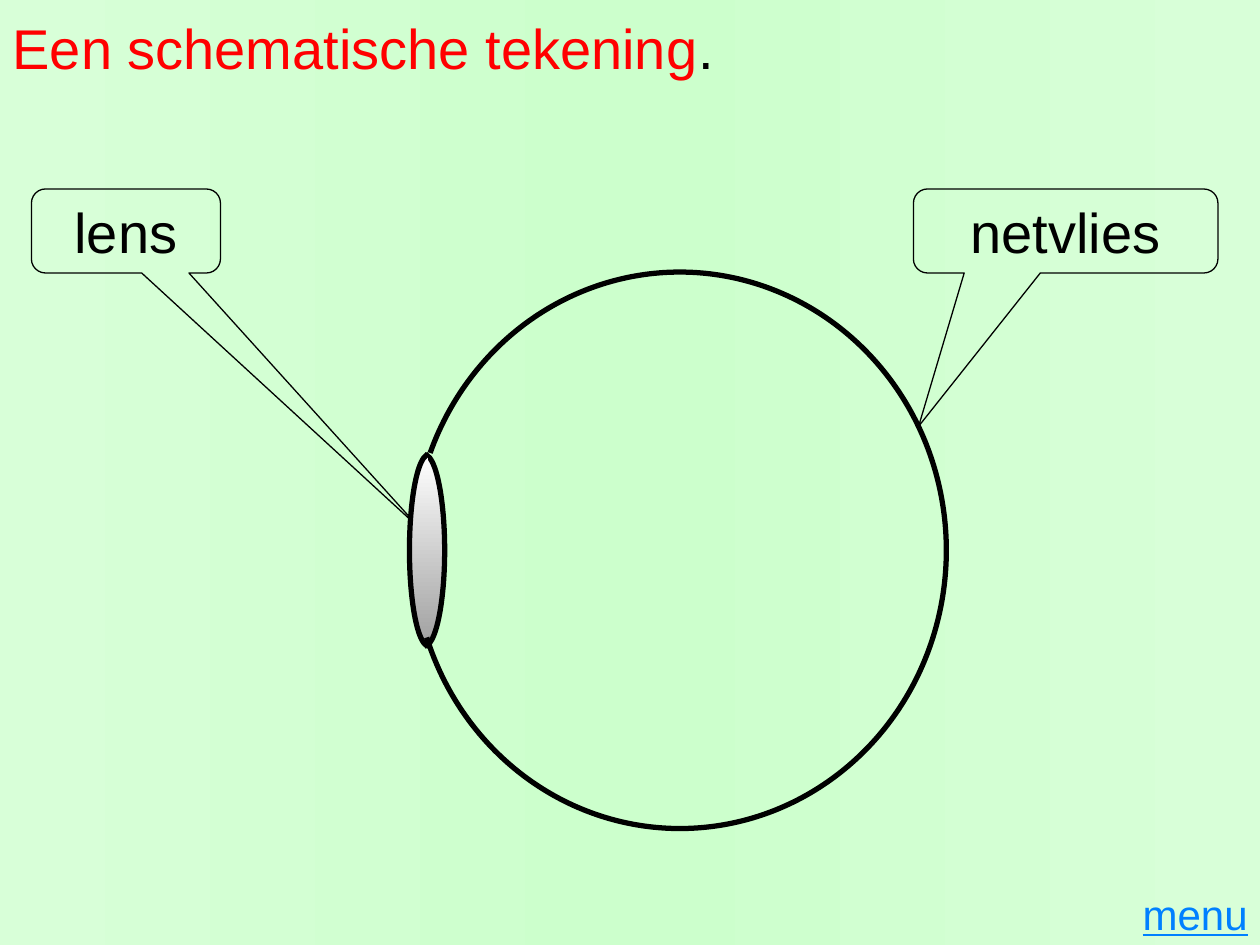
"""Build a slide with a labelled schematic drawing of the eye."""
import pptx
import pptx.dml.color
import pptx.enum.shapes
import pptx.enum.text
import pptx.oxml.ns
import pptx.util
from lxml import etree

Pt = pptx.util.Pt
SHAPE = pptx.enum.shapes.MSO_SHAPE
ALIGN = pptx.enum.text.PP_ALIGN
ANCHOR = pptx.enum.text.MSO_ANCHOR

COLOURS = {
    "ink": "000000",
    "title": "FF0000",
    "menu": "0080FF",
    "edge": "D8FFD8",
    "middle": "CCFFCC",
    "lens_top": "FFFFFF",
    "lens_bottom": "A0A0A0",
}
DEGREE = 0.6


def rgb(colour):
    return pptx.dml.color.RGBColor.from_string(COLOURS[colour])


def set_all(target, values):
    for name, value in values.items():
        setattr(target, name, value)


def paint_gradient(fill, owner, angle, colours):
    fill.gradient()
    fill.gradient_angle = angle
    qn = pptx.oxml.ns.qn
    stops = next(owner.iter(qn("a:gsLst")))
    for stop in list(stops):
        stops.remove(stop)
    for index, colour in enumerate(colours):
        position = 100000 * index // (len(colours) - 1)
        stop = etree.SubElement(stops, qn("a:gs"), pos=str(position))
        etree.SubElement(stop, qn("a:srgbClr"), val=COLOURS[colour])


def write(frame, pieces, size, align, anchor, underline=None):
    set_all(frame, {"word_wrap": True, "vertical_anchor": anchor,
                    "auto_size": pptx.enum.text.MSO_AUTO_SIZE.NONE})
    paragraph = frame.paragraphs[0]
    set_all(paragraph, {"alignment": align, "space_before": Pt(0)})
    for words, colour in pieces:
        run = paragraph.add_run()
        run.text = words
        set_all(run.font, {"name": "Arial", "size": Pt(size), "underline": underline})
        run.font.color.rgb = rgb(colour)


def add_outline(slide, preset, box, adjustments, width):
    outline = slide.shapes.add_shape(preset, *map(Pt, box))
    for index, value in enumerate(adjustments):
        outline.adjustments[index] = value
    outline.shadow.inherit = False
    outline.fill.background()
    outline.line.color.rgb = rgb("ink")
    outline.line.width = Pt(width)
    return outline


def add_callout(slide, label, left, width, tip):
    callout = add_outline(slide, SHAPE.ROUNDED_RECTANGULAR_CALLOUT,
                          (left, 108, width, 48), (*tip, 0.167), 0.75)
    write(callout.text_frame, [(label, "ink")], 32, ALIGN.CENTER, ANCHOR.MIDDLE)


def add_arc(slide, centre_x, radius_x, radius_y, start, end):
    centre_y = 314.5
    box = (centre_x - radius_x, centre_y - radius_y, 2 * radius_x, 2 * radius_y)
    return add_outline(slide, SHAPE.ARC, box, (start * DEGREE, end * DEGREE), 3)


def add_lens_half(slide, centre_x, radius_x, start, end):
    half = add_arc(slide, centre_x, radius_x, 54.7, start, end)
    paint_gradient(half.fill, half._element, 270, ["lens_top", "lens_bottom"])


def add_title(slide):
    title = slide.shapes.title
    set_all(title, {"left": Pt(0), "top": Pt(3.6), "width": Pt(720), "height": Pt(46)})
    pieces = [("Een schematische tekening", "title"), (".", "ink")]
    write(title.text_frame, pieces, 32, ALIGN.LEFT, ANCHOR.BOTTOM)


def add_menu(slide):
    menu = slide.shapes.add_textbox(Pt(638), Pt(504), Pt(82), Pt(36))
    write(menu.text_frame, [("menu", "menu")], 24, ALIGN.RIGHT, ANCHOR.BOTTOM, True)


def main():
    deck = pptx.Presentation()
    set_all(deck, {"slide_width": Pt(720), "slide_height": Pt(540)})
    slide = deck.slides.add_slide(deck.slide_layouts[5])
    paint_gradient(slide.background.fill, slide._element, 0, ["edge", "middle", "edge"])
    add_title(slide)
    add_callout(slide, "lens", 18, 108, (1.556, 3.544))
    add_callout(slide, "netvlies", 522, 174, (-0.483, 2.326))
    add_lens_half(slide, 242.6, 11.5, 270, 90)
    add_lens_half(slide, 245, 11, 90, 270)
    add_arc(slide, 388.5, 152.3, 159, 201.3, 161)
    add_menu(slide)
    deck.save("out.pptx")


if __name__ == "__main__":
    main()
